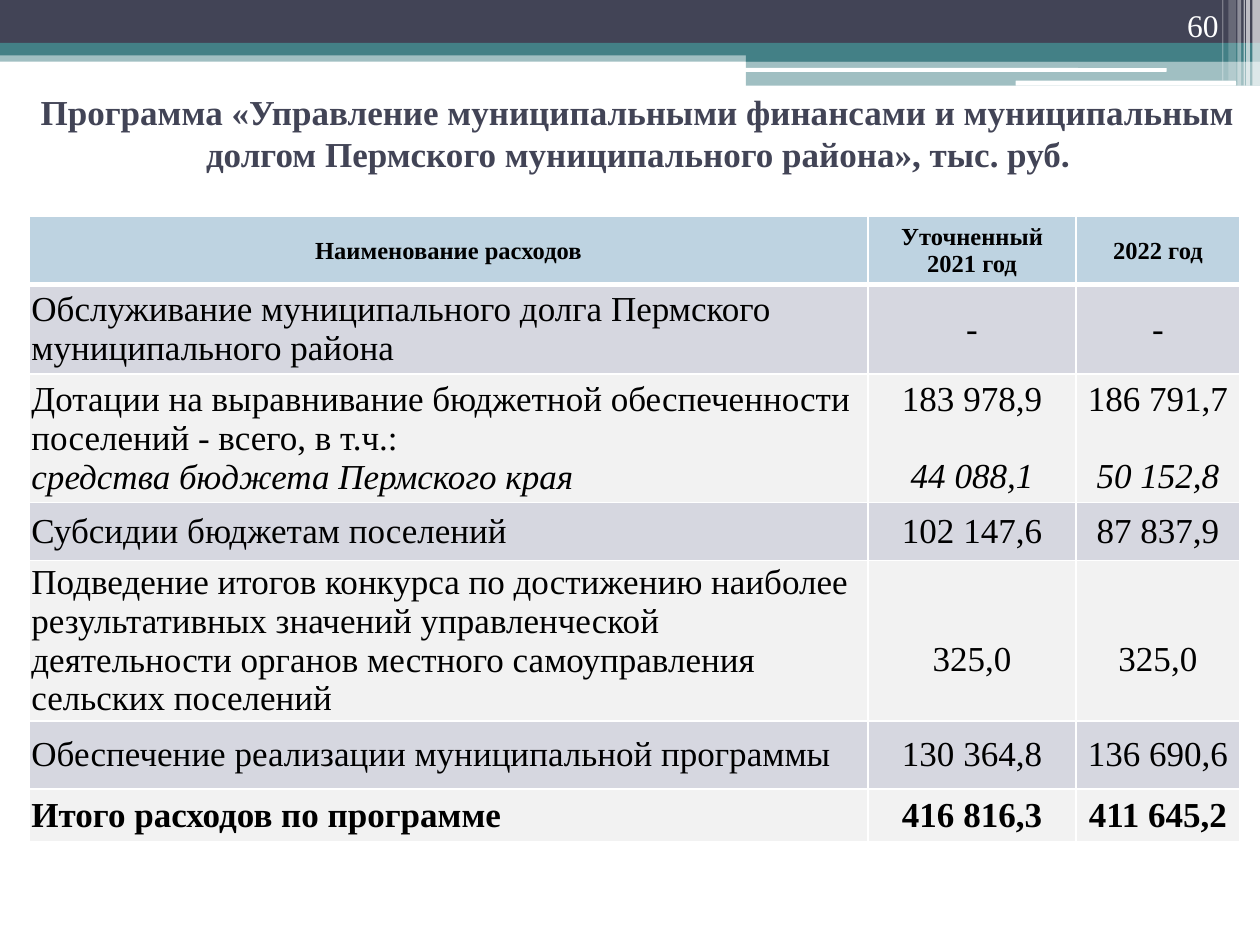
from lxml.etree import SubElement
from pptx import Presentation
from pptx.dml.color import RGBColor
from pptx.enum.shapes import MSO_SHAPE
from pptx.enum.text import MSO_ANCHOR, PP_ALIGN
from pptx.oxml.ns import qn
from pptx.util import Inches, Pt

COLORS = {
    "navy": "424456",
    "teal": "438086",
    "white": "FFFFFF",
    "black": "000000",
    "header": "BED3E1",
    "lilac": "D6D7E0",
    "grey": "F2F2F2",
}
SERIF = "Times New Roman"
LINE_HEIGHT = 22  # points, one line of 20 pt text

# left, top, width, height, colour, opacity in percent
BANDS = [
    (0, 0.4, 10, 0.09, "teal", 50),
    (0, 0, 10, 0.34, "navy", 100),
    (0, 0.34, 10, 0.1, "teal", 100),
    (5.92, 0.39, 4.08, 0.1, "teal", 100),
    (5.92, 0.48, 4.08, 0.2, "teal", 50),
]
ROUNDED_LINES = [
    (5.91, 0.54, 3.35, 0.03, "white", 100),
    (8.06, 0.64, 1.75, 0.04, "white", 100),
]
CORNER_STRIPES = [
    (9.94, 0, 0.06, 0.68, "white", 65),
    (9.89, 0, 0.03, 0.68, "white", 65),
    (9.87, 0, 0.01, 0.68, "white", 60),
    (9.82, 0, 0.03, 0.68, "white", 40),
    (9.75, 0, 0.06, 0.64, "white", 20),
    (9.7, 0, 0.01, 0.64, "white", 30),
]

COLUMN_WIDTHS = [6.66, 1.65, 1.3]
ROW_HEIGHTS = [0.54, 0.71, 1.02, 0.46, 1.27, 0.54, 0.42]
GRANTS_ROW, CONTEST_ROW = 2, 4
# A line break in a cell starts an italic "of which" paragraph
EXPENSES = [
    ("Наименование расходов", "Уточненный 2021 год", "2022 год"),
    ("Обслуживание муниципального долга Пермского муниципального района", "-", "-"),
    ("Дотации на выравнивание бюджетной обеспеченности поселений - всего, в т.ч.:\n"
     "средства бюджета Пермского края", "183 978,9\n44 088,1", "186 791,7\n50 152,8"),
    ("Субсидии бюджетам поселений", "102 147,6", "87 837,9"),
    ("Подведение итогов конкурса по достижению наиболее результативных значений "
     "управленческой деятельности органов местного самоуправления сельских поселений",
     "325,0", "325,0"),
    ("Обеспечение реализации муниципальной программы", "130 364,8", "136 690,6"),
    ("Итого расходов по программе", "416 816,3", "411 645,2"),
]


def rgb(color):
    return RGBColor.from_string(COLORS[color])


def set_font(font, size, color, bold=False, italic=False, name=SERIF):
    font.name, font.size = name, Pt(size)
    font.bold, font.italic = bold, italic
    font.color.rgb = rgb(color)


def add_band(slide, preset, left, top, width, height, color, opacity):
    band = slide.shapes.add_shape(
        preset, Inches(left), Inches(top), Inches(width), Inches(height))
    band.shadow.inherit = False
    band.line.fill.background()
    band.fill.solid()
    band.fill.fore_color.rgb = rgb(color)
    if opacity < 100:
        clr = band.fill._xPr.find(".//" + qn("a:srgbClr"))
        SubElement(clr, qn("a:alpha"), val=str(opacity * 1000))


def add_page_number(slide, number):
    box = slide.shapes.add_textbox(Inches(8.94), Inches(0), Inches(0.83), Inches(0.4))
    frame = box.text_frame
    frame.word_wrap = True
    frame.vertical_anchor = MSO_ANCHOR.BOTTOM
    paragraph = frame.paragraphs[0]
    paragraph.text = number
    paragraph.alignment = PP_ALIGN.RIGHT
    set_font(paragraph.font, 18, "white")


def fill_title(title):
    title.left, title.top = Inches(0), Inches(0.62)
    title.width, title.height = Inches(10.12), Inches(0.86)
    title.text_frame.vertical_anchor = MSO_ANCHOR.MIDDLE
    paragraph = title.text_frame.paragraphs[0]
    paragraph.alignment = PP_ALIGN.CENTER
    heading = ("Программа «Управление муниципальными финансами и муниципальным "
               "долгом Пермского муниципального района», тыс. руб")
    for text, name in ((heading, SERIF), (".", "Karla")):
        run = paragraph.add_run()
        run.text = text
        set_font(run.font, 20, "navy", bold=True, name=name)


def set_borders(cell, top, bottom):
    """Give the cell white borders; top and bottom widths are in points."""
    properties = cell._tc.get_or_add_tcPr()
    for side, width in (("L", 1), ("R", 1), ("T", top), ("B", bottom)):
        line = SubElement(properties, qn(f"a:ln{side}"), w=str(Pt(width)))
        fill = SubElement(line, qn("a:solidFill"))
        SubElement(fill, qn("a:srgbClr"), val=COLORS["white"])


def fill_cell(cell, text, row, column):
    is_header, is_total = row == 0, row == len(EXPENSES) - 1
    set_borders(cell, top=3 if row == 1 else 1, bottom=3 if is_header else 1)
    cell.fill.solid()
    cell.fill.fore_color.rgb = rgb(
        "header" if is_header else "lilac" if row % 2 else "grey")
    cell.vertical_anchor = MSO_ANCHOR.MIDDLE
    if not is_header:
        cell.margin_left = cell.margin_right = Inches(0.02)
        cell.margin_top = cell.margin_bottom = Inches(0.02)
    if row == CONTEST_ROW and column:
        cell.margin_top += Pt(LINE_HEIGHT)  # figures sit on the third text line

    cell.text = text
    for index, paragraph in enumerate(cell.text_frame.paragraphs):
        paragraph.alignment = PP_ALIGN.CENTER if is_header or column else PP_ALIGN.LEFT
        set_font(paragraph.font, 14 if is_header else 20, "black",
                 bold=is_header or is_total, italic=index > 0)
        if row == GRANTS_ROW and column and index:
            paragraph.space_before = Pt(LINE_HEIGHT)


def add_expense_table(slide):
    table = slide.shapes.add_table(
        len(ROW_HEIGHTS), len(COLUMN_WIDTHS), Inches(0.23), Inches(1.72),
        Inches(sum(COLUMN_WIDTHS)), Inches(sum(ROW_HEIGHTS))).table
    table.horz_banding = False
    for column, width in zip(table.columns, COLUMN_WIDTHS):
        column.width = Inches(width)
    for row, height in zip(table.rows, ROW_HEIGHTS):
        row.height = Inches(height)
    for row, expense in enumerate(EXPENSES):
        for column, text in enumerate(expense):
            fill_cell(table.cell(row, column), text, row, column)


def main():
    prs = Presentation()
    prs.slide_width, prs.slide_height = Inches(10), Inches(7.5)
    slide = prs.slides.add_slide(prs.slide_layouts[5])
    for preset, bands in ((MSO_SHAPE.RECTANGLE, BANDS),
                          (MSO_SHAPE.ROUNDED_RECTANGLE, ROUNDED_LINES),
                          (MSO_SHAPE.RECTANGLE, CORNER_STRIPES)):
        for band in bands:
            add_band(slide, preset, *band)
    fill_title(slide.shapes.title)
    add_expense_table(slide)
    add_page_number(slide, "60")
    prs.save("out.pptx")


if __name__ == "__main__":
    main()
